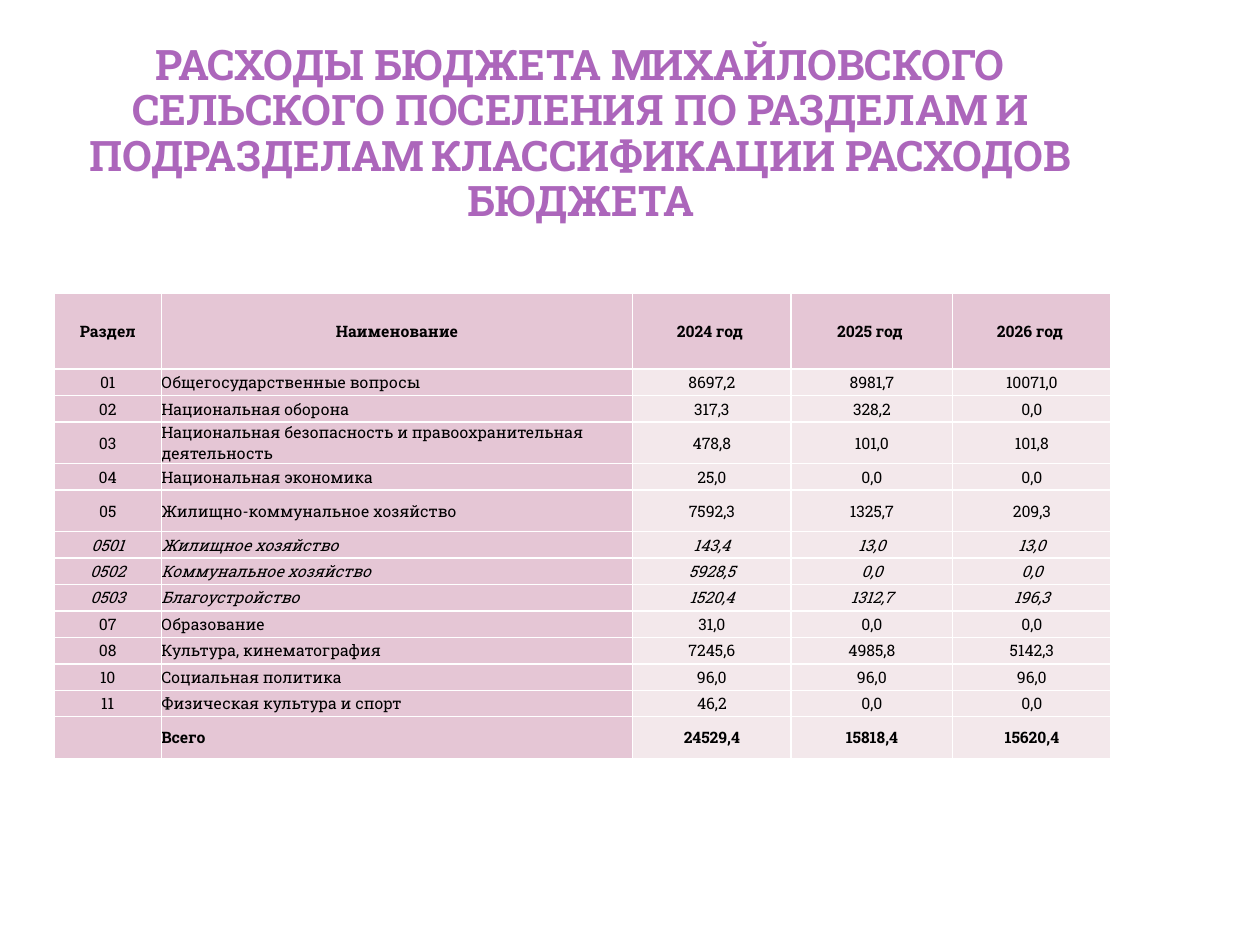
from lxml.etree import SubElement
from pptx import Presentation
from pptx.dml.color import RGBColor
from pptx.enum.text import MSO_ANCHOR, PP_ALIGN
from pptx.oxml.ns import qn
from pptx.util import Inches, Pt

FONT = "Roboto Slab"
PURPLE = RGBColor(0xAC, 0x66, 0xBB)
BLACK = RGBColor(0, 0, 0)
PINK = RGBColor(0xE5, 0xC6, 0xD5)
PALE_PINK = RGBColor(0xF3, 0xE8, 0xEB)
BORDER = "FFFFFF"

TITLE = ("РАСХОДЫ БЮДЖЕТА МИХАЙЛОВСКОГО СЕЛЬСКОГО ПОСЕЛЕНИЯ ПО РАЗДЕЛАМ "
         "И ПОДРАЗДЕЛАМ КЛАССИФИКАЦИИ РАСХОДОВ БЮДЖЕТА")
HEADER = ("Раздел", "Наименование", "2024 год ", "2025 год ", "2026 год ")
EXPENSES = [
    ("01", "Общегосударственные вопросы", "8697,2", "8981,7", "10071,0"),
    ("02", "Национальная оборона", "317,3", "328,2", "0,0"),
    ("03", "Национальная безопасность и правоохранительная деятельность",
     "478,8", "101,0", "101,8"),
    ("04", "Национальная экономика", "25,0", "0,0", "0,0"),
    ("05", "Жилищно-коммунальное хозяйство", "7592,3", "1325,7", "209,3"),
    ("0501", "Жилищное хозяйство", "143,4", "13,0", "13,0"),
    ("0502", "Коммунальное хозяйство", "5928,5", "0,0", "0,0"),
    ("0503", "Благоустройство", "1520,4", "1312,7", "196,3"),
    ("07", "Образование", "31,0", "0,0", "0,0"),
    ("08", "Культура, кинематография", "7245,6", "4985,8", "5142,3"),
    ("10", "Социальная политика", "96,0", "96,0", "96,0"),
    ("11", "Физическая культура и спорт", "46,2", "0,0", "0,0"),
]
TOTAL = ("", "Всего", "24529,4", "15818,4", "15620,4")

COLUMN_WIDTHS = (0.85, 3.74, 1.26, 1.28, 1.26)
HEADER_HEIGHT, ROW_HEIGHT, TALL_HEIGHT = 0.6, 0.21, 0.33
TALL_SECTIONS = ("03", "05", "")


def set_all(target, values):
    for name, value in values.items():
        setattr(target, name, value)


def write(paragraph, text, color, **values):
    run = paragraph.add_run()
    run.text = text
    set_all(run.font, {"name": FONT, **values})
    run.font.color.rgb = color


def add_borders(cell):
    # Border lines must precede the fill in the cell properties
    properties = cell._tc.get_or_add_tcPr()
    for side in ("a:lnL", "a:lnR", "a:lnT", "a:lnB"):
        line = SubElement(properties, qn(side), w=str(Pt(1)))
        SubElement(SubElement(line, qn("a:solidFill")), qn("a:srgbClr"), val=BORDER)


def row_height(row):
    if row is HEADER:
        return HEADER_HEIGHT
    return TALL_HEIGHT if row[0] in TALL_SECTIONS else ROW_HEIGHT


presentation = Presentation()
presentation.slide_width, presentation.slide_height = Inches(10), Inches(7.5)
slide = presentation.slides.add_slide(presentation.slide_layouts[6])

# Title
title = slide.shapes.add_textbox(
    Inches(0.31), Inches(0.23), Inches(8.59), Inches(1.56)).text_frame
set_all(title, {
    "word_wrap": True, "vertical_anchor": MSO_ANCHOR.BOTTOM,
    "margin_left": Inches(0.05), "margin_right": Inches(0.05),
    "margin_top": 0, "margin_bottom": 0,
})
set_all(title.paragraphs[0], {"alignment": PP_ALIGN.CENTER, "line_spacing": 0.9})
write(title.paragraphs[0], TITLE, PURPLE, size=Pt(24), bold=True)

# Expense table
rows = [HEADER, *EXPENSES, TOTAL]
heights = [row_height(row) for row in rows]
budget = slide.shapes.add_table(
    len(rows), len(HEADER), Inches(0.43), Inches(2.33),
    Inches(sum(COLUMN_WIDTHS)), Inches(sum(heights))).table
for column, width in zip(budget.columns, COLUMN_WIDTHS):
    column.width = Inches(width)

for r, (row, height) in enumerate(zip(rows, heights)):
    budget.rows[r].height = Inches(height)
    bold = row is HEADER or row is TOTAL
    subsection = len(row[0]) == 4
    for c, text in enumerate(row):
        cell = budget.cell(r, c)
        set_all(cell, {
            "vertical_anchor": MSO_ANCHOR.MIDDLE, "margin_left": 0,
            "margin_right": 0, "margin_top": 0, "margin_bottom": 0,
        })
        add_borders(cell)
        cell.fill.solid()
        cell.fill.fore_color.rgb = PINK if row is HEADER or c < 2 else PALE_PINK
        paragraph = cell.text_frame.paragraphs[0]
        is_name = c == 1 and row is not HEADER
        paragraph.alignment = PP_ALIGN.LEFT if is_name else PP_ALIGN.CENTER
        if text:
            write(paragraph, text, BLACK, size=Pt(9), bold=bold,
                  italic=subsection)

presentation.save("out.pptx")
